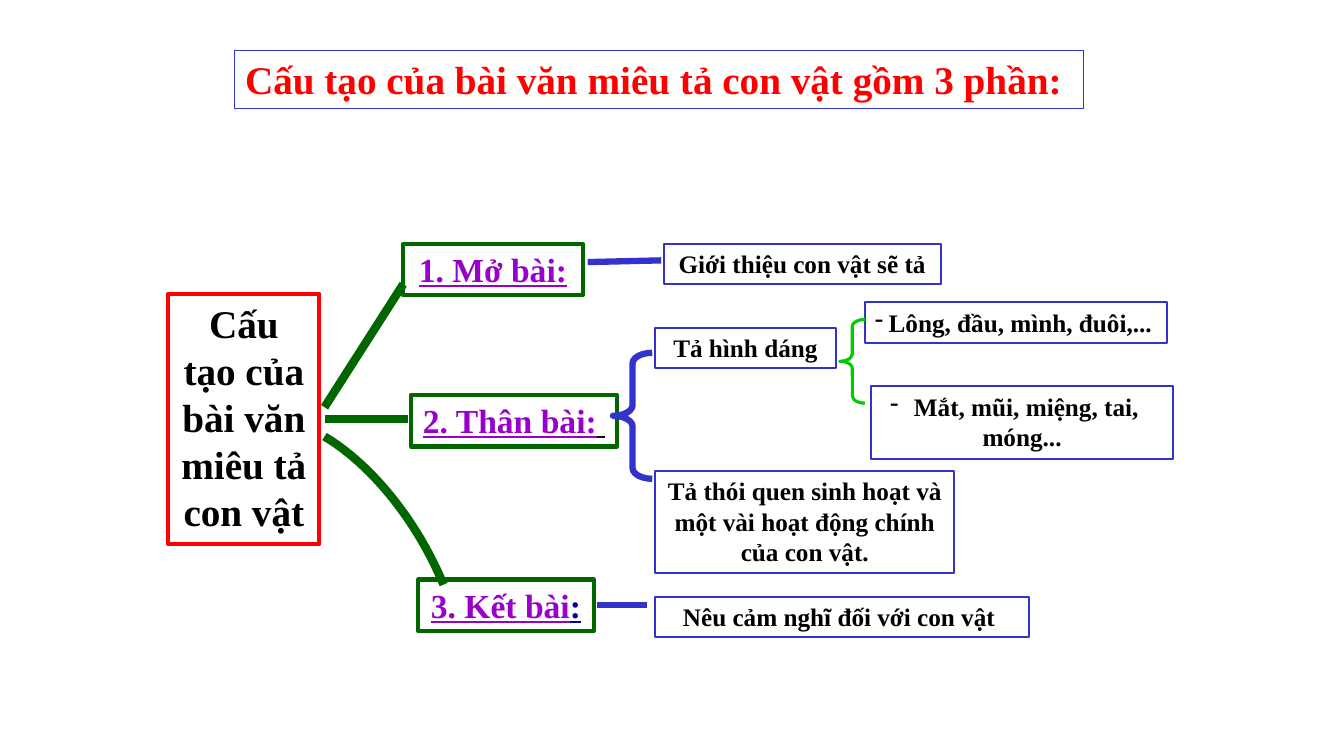
from dataclasses import dataclass

from lxml.etree import SubElement
from pptx import Presentation
from pptx.dml.color import RGBColor
from pptx.enum.shapes import MSO_CONNECTOR, MSO_SHAPE
from pptx.enum.text import MSO_ANCHOR, MSO_AUTO_SIZE, PP_ALIGN
from pptx.oxml.ns import qn
from pptx.util import Pt

FONT = "Times New Roman"
BLACK, RED, PURPLE, NAVY = "000000", "FF0000", "9900CC", "000099"
DARK_GREEN, LIGHT_GREEN, BLUE = "006600", "00CC00", "3333CC"

Point = tuple[float, float]


@dataclass(frozen=True)
class Span:
    text: str
    color: str = BLACK
    bold: bool = True


@dataclass(frozen=True)
class Box:
    left: float
    top: float
    width: float
    height: float
    spans: tuple[Span, ...]
    size: float = 18
    border: str = BLUE
    border_width: float = 1.5
    underline: bool = False
    bullet: str = ""


@dataclass(frozen=True)
class Link:
    start: Point
    end: Point
    color: str
    width: float


@dataclass(frozen=True)
class Brace:
    left: float
    top: float
    width: float
    height: float
    curl: float
    color: str
    line_width: float


def part_heading(left: float, top: float, width: float, *spans: Span) -> Box:
    return Box(left, top, width, 36.7, spans, 24, DARK_GREEN, 3, underline=True)


def detail(left: float, top: float, width: float, height: float,
           text: str, bullet: str = "") -> Box:
    return Box(left, top, width, height, (Span(text),), bullet=bullet)


TITLE = Box(167.8, 36, 606.2, 41.8,
            (Span("Cấu tạo của bài văn miêu tả con vật gồm 3 phần:", RED),),
            28, border_width=0.75)

BOXES = (
    Box(120.2, 210.2, 108, 178.6, (Span("Cấu tạo của bài văn miêu tả con vật"),),
        28, RED, 3),
    part_heading(288, 174.2, 128.2, Span("1. Mở bài:", PURPLE)),
    part_heading(293.8, 282.2, 146.9, Span("2. Thân bài:", PURPLE),
                 Span(" ", bold=False)),
    part_heading(298.8, 414, 125.3, Span("3. Kết bài", PURPLE), Span(":", NAVY)),
    detail(474, 174.2, 198, 28.8, "Giới thiệu con vật sẽ tả"),
    detail(468, 234, 128.9, 28.8, "Tả hình dáng"),
    detail(468, 336.2, 213.8, 73.4,
           "Tả thói quen sinh hoạt và một vài hoạt động chính của con vật."),
    detail(468, 426.2, 267.1, 28.8, "Nêu cảm nghĩ đối với con vật "),
    detail(617.8, 216, 216, 28.8, "Lông, đầu, mình, đuôi,...", "-"),
    detail(622.1, 275.8, 216, 51.8, "Mắt, mũi, miệng, tai, móng...", "-"),
)

LINKS = (
    Link((231.8, 290.9), (288, 203), DARK_GREEN, 6),
    Link((231.8, 299.2), (291.6, 299.2), DARK_GREEN, 6),
    Link((419.8, 187.2), (472.3, 186), BLUE, 4.5),
    Link((426.2, 432), (462.2, 432), BLUE, 4.5),
)

BRACES = (
    Brace(437.8, 252, 28.1, 90, 0.27, BLUE, 4.5),
    Brace(599.8, 228.2, 18, 59.8, 0.28, LIGHT_GREEN, 2.25),
)

CLOSING_CURVE: tuple[Point, ...] = ((231.8, 311.8), (264, 331), (297, 370), (316.8, 417.6))


def rgb(color: str) -> RGBColor:
    return RGBColor.from_string(color)


def set_line(shape, color: str, width: float) -> None:
    shape.line.color.rgb = rgb(color)
    shape.line.width = Pt(width)


def write_text(shape, spans: tuple[Span, ...], *, size: float, align: PP_ALIGN,
               underline: bool = False, bullet: str = "") -> None:
    frame = shape.text_frame
    frame.word_wrap = True
    frame.auto_size = MSO_AUTO_SIZE.NONE
    frame.vertical_anchor = MSO_ANCHOR.TOP
    paragraph = frame.paragraphs[0]
    paragraph.alignment = align
    if bullet:
        SubElement(paragraph._p.get_or_add_pPr(), qn("a:buChar")).set("char", bullet)
    for span in spans:
        run = paragraph.add_run()
        run.text = span.text
        run.font.name = FONT
        run.font.size = Pt(size)
        run.font.bold = span.bold
        run.font.underline = underline
        run.font.color.rgb = rgb(span.color)


def add_title(slide, box: Box) -> None:
    title = slide.shapes.title
    title.left, title.top = Pt(box.left), Pt(box.top)
    title.width, title.height = Pt(box.width), Pt(box.height)
    set_line(title, box.border, box.border_width)
    write_text(title, box.spans, size=box.size, align=PP_ALIGN.LEFT)


def add_outline(slide, kind: MSO_SHAPE, left: float, top: float, width: float,
                height: float, color: str, line_width: float):
    shape = slide.shapes.add_shape(kind, Pt(left), Pt(top), Pt(width), Pt(height))
    shape.shadow.inherit = False
    shape.fill.background()
    set_line(shape, color, line_width)
    return shape


def add_box(slide, box: Box) -> None:
    shape = add_outline(slide, MSO_SHAPE.RECTANGLE, box.left, box.top, box.width,
                        box.height, box.border, box.border_width)
    write_text(shape, box.spans, size=box.size, align=PP_ALIGN.CENTER,
               underline=box.underline, bullet=box.bullet)


def add_link(slide, link: Link) -> None:
    connector = slide.shapes.add_connector(
        MSO_CONNECTOR.STRAIGHT, *map(Pt, link.start), *map(Pt, link.end))
    set_line(connector, link.color, link.width)
    SubElement(connector._element.spPr, qn("a:effectLst"))


def add_brace(slide, brace: Brace) -> None:
    shape = add_outline(slide, MSO_SHAPE.LEFT_BRACE, brace.left, brace.top,
                        brace.width, brace.height, brace.color, brace.line_width)
    shape.adjustments[0] = brace.curl


def bezier_point(controls: tuple[Point, ...], t: float) -> Point:
    weights = ((1 - t) ** 3, 3 * t * (1 - t) ** 2, 3 * t ** 2 * (1 - t), t ** 3)
    x, y = (sum(w * value for w, value in zip(weights, axis)) for axis in zip(*controls))
    return Pt(x), Pt(y)


def add_curve(slide, controls: tuple[Point, ...], color: str, width: float,
              steps: int = 30) -> None:
    start, *rest = (bezier_point(controls, i / steps) for i in range(steps + 1))
    builder = slide.shapes.build_freeform(*start)
    builder.add_line_segments(rest, close=False)
    curve = builder.convert_to_shape()
    curve.shadow.inherit = False
    curve.fill.background()
    set_line(curve, color, width)


def main() -> None:
    presentation = Presentation()
    presentation.slide_width, presentation.slide_height = Pt(960), Pt(540)
    title_only = presentation.slide_layouts[5]
    slide = presentation.slides.add_slide(title_only)
    add_title(slide, TITLE)
    for box in BOXES:
        add_box(slide, box)
    add_curve(slide, CLOSING_CURVE, DARK_GREEN, 6)
    for link in LINKS:
        add_link(slide, link)
    for brace in BRACES:
        add_brace(slide, brace)
    presentation.save("out.pptx")


if __name__ == "__main__":
    main()
